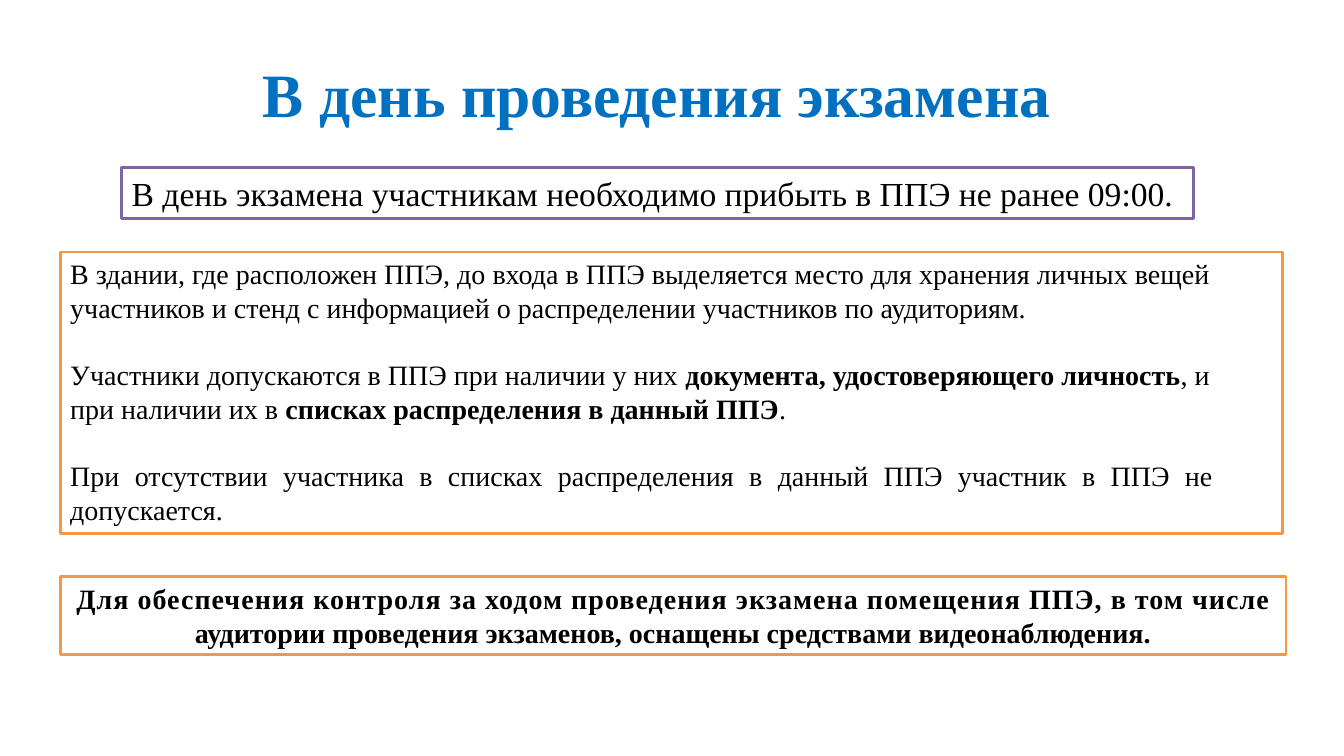
import dataclasses

import pptx
import pptx.dml.color
import pptx.enum.shapes
import pptx.enum.text
import pptx.util

Cm = pptx.util.Cm
Pt = pptx.util.Pt
Align = pptx.enum.text.PP_ALIGN


@dataclasses.dataclass(frozen=True)
class Theme:
    """Colours and type sizes of the slide."""
    font: str = "Times New Roman"
    heading: str = "0070C0"
    text: str = "000000"
    paper: str = "FFFFFF"
    arrival: str = "8064A2"
    rules: str = "F79646"
    heading_size: int = 44
    arrival_size: int = 24
    body_size: int = 20
    border: float = 2
    paragraph_gap: int = 24
    wide_tracking: int = 75


THEME = Theme()


def rgb(code):
    """Turn a hex code into a colour."""
    return pptx.dml.color.RGBColor.from_string(code)


def apply(target, formats):
    """Set every attribute in a dict of format values."""
    for name, value in formats.items():
        setattr(target, name, value)


def write_paragraphs(frame, paragraphs, size, color, anchor):
    """Fill a frame with (alignment, [(wording, bold), ...]) paragraphs."""
    apply(frame, {"word_wrap": True, "vertical_anchor": anchor})
    for index, (alignment, pieces) in enumerate(paragraphs):
        paragraph = frame.add_paragraph() if index else frame.paragraphs[0]
        paragraph.alignment = alignment
        for wording, bold in pieces:
            run = paragraph.add_run()
            run.text = wording
            apply(run.font, {"name": THEME.font, "size": Pt(size), "bold": bold})
            run.font.color.rgb = rgb(color)


def add_heading(slide, box):
    """Place the heading centred in its box."""
    heading = slide.shapes.add_textbox(*box)
    write_paragraphs(heading.text_frame,
                     [(Align.CENTER, [("В день проведения экзамена", True)])],
                     THEME.heading_size, THEME.heading, pptx.enum.text.MSO_ANCHOR.MIDDLE)


def add_notice(slide, box, border, size, paragraphs):
    """Place a bordered notice and return its text frame."""
    notice = slide.shapes.add_shape(pptx.enum.shapes.MSO_SHAPE.RECTANGLE, *box)
    notice.shadow.inherit = False
    notice.fill.solid()
    notice.fill.fore_color.rgb = rgb(THEME.paper)
    notice.line.color.rgb = rgb(border)
    notice.line.width = Pt(THEME.border)
    frame = notice.text_frame
    write_paragraphs(frame, paragraphs, size, THEME.text, pptx.enum.text.MSO_ANCHOR.TOP)
    frame.auto_size = pptx.enum.text.MSO_AUTO_SIZE.SHAPE_TO_FIT_TEXT
    return frame


def add_arrival(slide, box):
    """Place the arrival time notice."""
    add_notice(slide, box, THEME.arrival, THEME.arrival_size, [
        (Align.LEFT, [("В день экзамена участникам необходимо прибыть в ППЭ не ранее 09:00.", False)]),
    ])


def add_admission(slide, box):
    """Place the admission rules with a wide right margin."""
    rules = add_notice(slide, box, THEME.rules, THEME.body_size, [
        (Align.LEFT, [("В здании, где расположен ППЭ, до входа в ППЭ выделяется место для хранения "
                       "личных вещей участников и стенд с информацией о распределении участников "
                       "по аудиториям.", False)]),
        (Align.LEFT, [("Участники допускаются в ППЭ при наличии у них ", False),
                      ("документа, удостоверяющего личность", True),
                      (", и при наличии их в ", False),
                      ("списках распределения в данный ППЭ", True),
                      (".", False)]),
        (Align.JUSTIFY, [("При отсутствии участника в списках распределения в данный ППЭ участник "
                          "в ППЭ не допускается.", False)]),
    ])
    rules.margin_right = Cm(1.75)
    for rule in rules.paragraphs[1:]:
        rule.space_before = Pt(THEME.paragraph_gap)


def add_surveillance(slide, box):
    """Place the video surveillance notice with a stretched first line."""
    surveillance = add_notice(slide, box, THEME.rules, THEME.body_size, [
        (Align.CENTER, [("Для обеспечения контроля за ходом проведения экзамена помещения ППЭ, "
                         "в том числе", True)]),
        (Align.CENTER, [("аудитории проведения экзаменов, оснащены средствами видеонаблюдения.", True)]),
    ])
    opening = surveillance.paragraphs[0].runs[0]
    opening.font._element.set("spc", str(THEME.wide_tracking))


def main():
    """Build and save the slide."""
    deck = pptx.Presentation()
    apply(deck, {"slide_width": Cm(33.87), "slide_height": Cm(19.05)})
    slide = deck.slides.add_slide(deck.slide_layouts[6])
    add_heading(slide, (Cm(1.32), Cm(0.74), Cm(30.48), Cm(3.18)))
    add_arrival(slide, (Cm(3.07), Cm(4.22), Cm(27), Cm(1.28)))
    add_admission(slide, (Cm(1.52), Cm(6.35), Cm(30.81), Cm(7.09)))
    add_surveillance(slide, (Cm(1.52), Cm(14.53), Cm(30.89), Cm(1.96)))
    deck.save("out.pptx")


if __name__ == "__main__":
    main()
